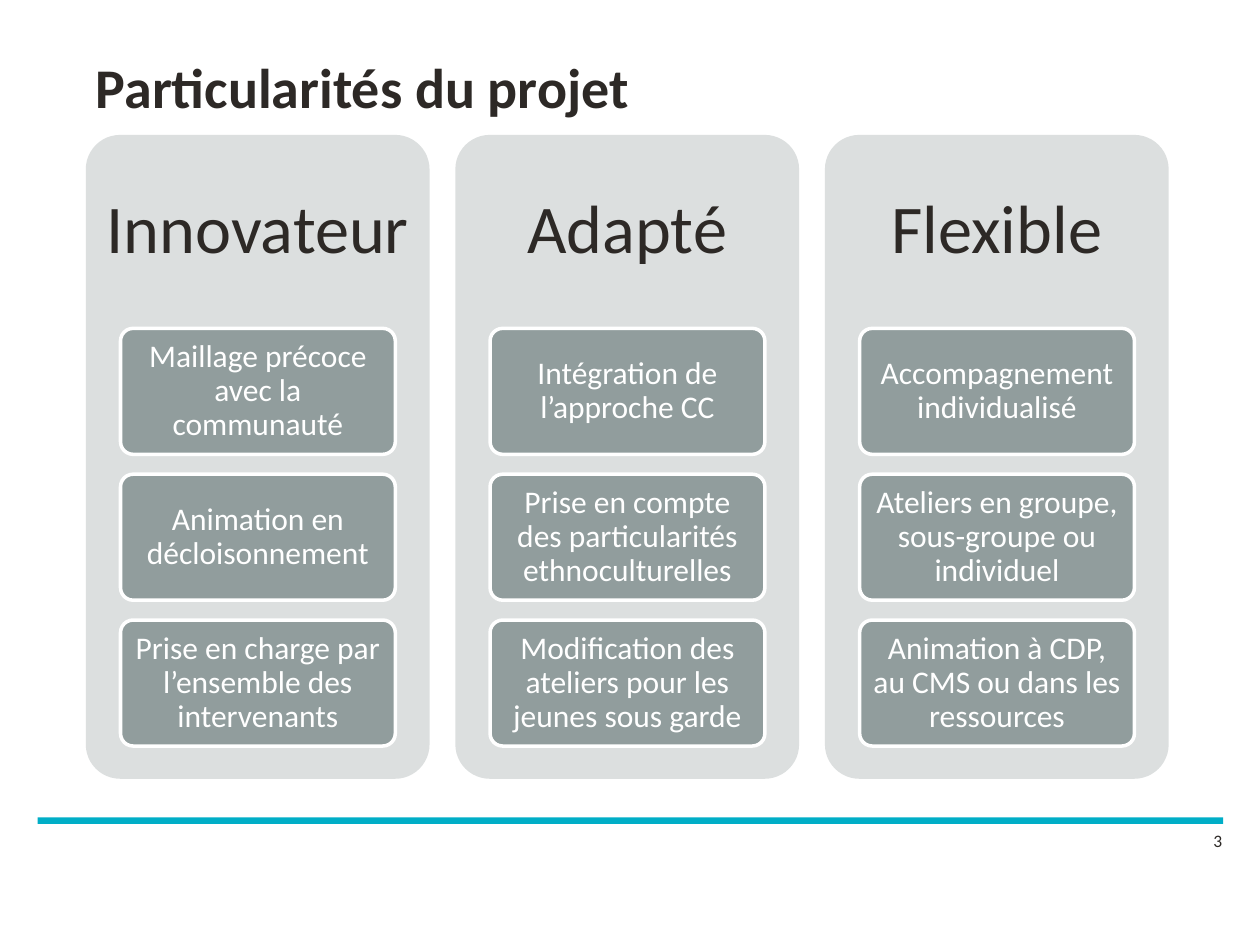
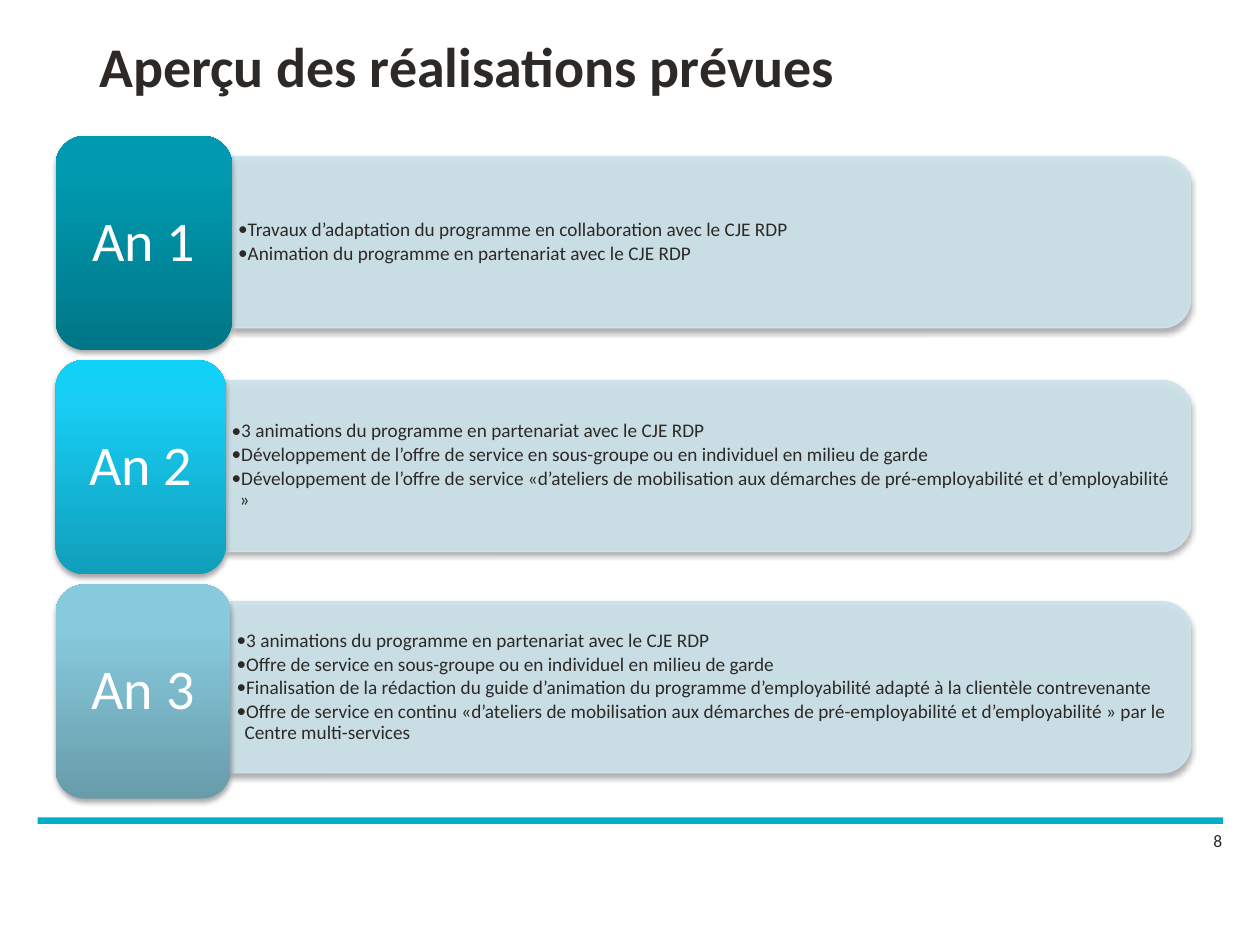
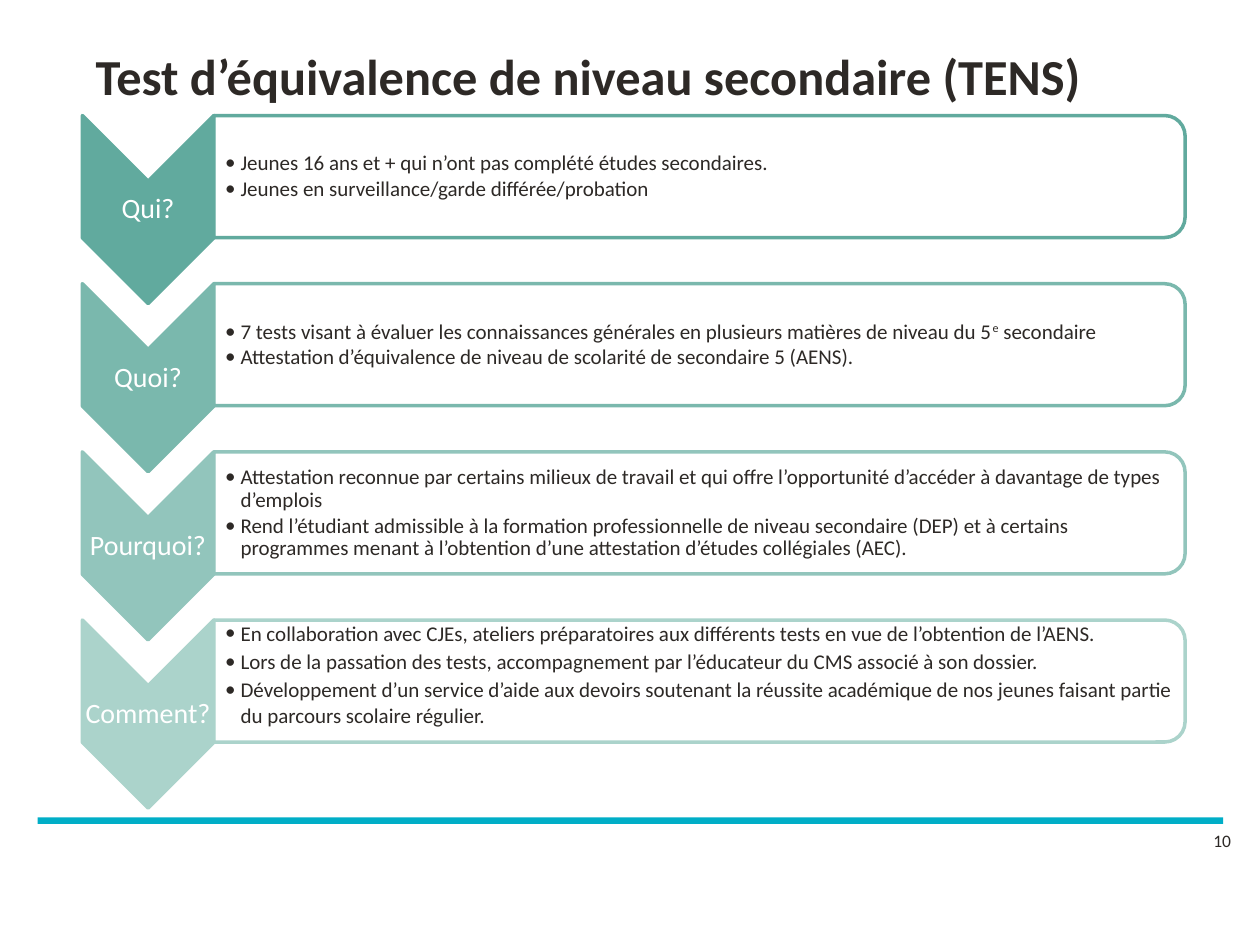
from copy import deepcopy

from lxml.etree import SubElement
from pptx import Presentation
from pptx.dml.color import RGBColor
from pptx.enum.shapes import MSO_SHAPE
from pptx.enum.text import MSO_ANCHOR, PP_ALIGN
from pptx.oxml.ns import qn
from pptx.util import Cm, Pt

FONT = "Calibri"
INK = "2D2926"
WHITE = "FFFFFF"
ACCENT = "00AEC7"
CARD = "DCDFDF"
CARD_ITEM = "919D9D"
YEAR_PANEL = "CCE3EB"

FEATURES = [
    ("Innovateur", [
        "Maillage précoce avec la communauté",
        "Animation en décloisonnement",
        "Prise en charge par l’ensemble des intervenants",
    ]),
    ("Adapté", [
        "Intégration de l’approche CC",
        "Prise en compte des particularités ethnoculturelles",
        "Modification des ateliers pour les jeunes sous garde",
    ]),
    ("Flexible", [
        "Accompagnement individualisé",
        "Ateliers en groupe, sous-groupe ou individuel",
        "Animation à CDP, au CMS ou dans les ressources",
    ]),
]

YEARS = [
    ("An 1", 3.56, 3.16, ("007687", "0099AF", "009AB0"), [
        "Travaux d’adaptation du programme en collaboration avec le CJE RDP",
        "Animation du programme en partenariat avec le CJE RDP",
    ]),
    ("An 2", 3.43, 7.67, ("119EBB", "17CDF3", "12D1F8"), [
        "3 animations du programme en partenariat avec le CJE RDP",
        "Développement de l’offre de service en sous-groupe ou en individuel en milieu de garde",
        "Développement de l’offre de service «d’ateliers de mobilisation aux démarches "
        "de pré-employabilité et d’employabilité »",
    ]),
    ("An 3", 3.53, 12.13, ("689CAA", "87CADD", "86CCE0"), [
        "3 animations du programme en partenariat avec le CJE RDP",
        "Offre de service en sous-groupe ou en individuel en milieu de garde",
        "Finalisation de la rédaction du guide d’animation du programme d’employabilité "
        "adapté à la clientèle contrevenante",
        "Offre de service en continu «d’ateliers de mobilisation aux démarches "
        "de pré-employabilité et d’employabilité » par le Centre multi-services",
    ]),
]

QUESTIONS = [
    ("Qui?", "61AA9E", 0.9, 0, [
        "Jeunes 16 ans et + qui n’ont pas complété études secondaires.",
        "Jeunes en surveillance/garde différée/probation",
    ]),
    ("Quoi?", "7AB8AD", 0.9, 0, [
        "7 tests visant à évaluer les connaissances générales en plusieurs matières "
        "de niveau du 5^e^ secondaire",
        "Attestation d’équivalence de niveau de scolarité de secondaire 5 (AENS).",
    ]),
    ("Pourquoi?", "92C5BC", 0.9, 0, [
        "Attestation reconnue par certains milieux de travail et qui offre l’opportunité "
        "d’accéder à davantage de types d’emplois",
        "Rend l’étudiant admissible à la formation professionnelle de niveau secondaire (DEP) "
        "et à certains programmes menant à l’obtention d’une attestation d’études "
        "collégiales (AEC).",
    ]),
    ("Comment?", "ABD3CB", 1.0, 0.16, [
        "En collaboration avec CJEs, ateliers préparatoires aux différents tests "
        "en vue de l’obtention de l’AENS.",
        "Lors de la passation des tests, accompagnement par l’éducateur du CMS "
        "associé à son dossier.",
        "Développement d’un service d’aide aux devoirs soutenant la réussite académique "
        "de nos jeunes faisant partie du parcours scolaire régulier.",
    ]),
]


def color(value):
    return RGBColor.from_string(value)


def add_bullet(para, indent):
    properties = para._p.get_or_add_pPr()
    properties.set("marL", str(Cm(indent)))
    properties.set("indent", str(-Cm(indent)))
    SubElement(properties, qn("a:buFont")).set("typeface", FONT)
    SubElement(properties, qn("a:buChar")).set("char", "•")


def write_text(box, lines, size=12, ink=INK, bold=False, align=PP_ALIGN.LEFT,
               anchor=MSO_ANCHOR.MIDDLE, insets=(0.25, 0.13), right=None,
               spacing=1.0, after=0, indent=0):
    frame = box.text_frame
    frame.word_wrap = True
    frame.vertical_anchor = anchor
    frame.margin_left = Cm(insets[0])
    frame.margin_right = Cm(insets[0] if right is None else right)
    frame.margin_top = frame.margin_bottom = Cm(insets[1])
    for index, line in enumerate(lines):
        para = frame.paragraphs[0] if index == 0 else frame.add_paragraph()
        para.alignment = align
        para.line_spacing = spacing
        para.space_after = Pt(after if index < len(lines) - 1 else 0)
        if indent:
            add_bullet(para, indent)
        for position, piece in enumerate(line.split("^")):
            span = para.add_run()
            span.text = piece
            span.font.name = FONT
            span.font.size = Pt(size)
            span.font.bold = bold
            span.font.color.rgb = color(ink)
            if position % 2:
                span._r.get_or_add_rPr().set("baseline", "30000")


def add_text(page, lines, left, top, width, height, **style):
    box = page.shapes.add_textbox(Cm(left), Cm(top), Cm(width), Cm(height))
    write_text(box, lines, **style)


def add_block(page, kind, left, top, width, height, fill=None, line=None,
              weight=2, opacity=100, corner=None):
    block = page.shapes.add_shape(kind, Cm(left), Cm(top), Cm(width), Cm(height))
    block.shadow.inherit = False
    if corner is not None:
        block.adjustments[0] = corner
    if fill:
        block.fill.solid()
        block.fill.fore_color.rgb = color(fill)
        if opacity < 100:
            tone = block._element.spPr.find(".//" + qn("a:srgbClr"))
            SubElement(tone, qn("a:alpha")).set("val", str(opacity * 1000))
    if line:
        block.line.color.rgb = color(line)
        block.line.width = Pt(weight)
    else:
        block.line.fill.background()
    return block


def add_turned_block(page, kind, left, top, width, height, **style):
    shift = (width - height) / 2
    block = add_block(page, kind, left + shift, top - shift, height, width, **style)
    block.rotation = 90
    return block


def add_shadow(block):
    effects = block._element.spPr.find(qn("a:effectLst"))
    shadow = SubElement(effects, qn("a:outerShdw"), blurRad="40000", dist="23000",
                        dir="5400000", rotWithShape="0")
    tone = SubElement(shadow, qn("a:srgbClr"), val="000000")
    SubElement(tone, qn("a:alpha"), val="35000")


def shade_upward(block, colors):
    block.fill.gradient()
    block.fill.gradient_angle = 90
    stops = block._element.spPr.find(".//" + qn("a:gsLst"))
    stops.append(deepcopy(stops[0]))
    for stop, value, position in zip(block.fill.gradient_stops, colors, (0, 0.8, 1)):
        stop.color.rgb = color(value)
        stop.position = position


def add_page(deck, title, number, left, top, size=32):
    page = deck.slides.add_slide(deck.slide_layouts[6])
    add_block(page, MSO_SHAPE.RECTANGLE, 0.76, 16.48, 23.9, 0.13, fill=ACCENT)
    add_text(page, [str(number)], 24.21, 16.61, 1.19, 1.02, size=10, anchor=MSO_ANCHOR.TOP)
    add_text(page, [title], left, top, 22.23, 1.96, size=size, bold=True)
    return page


def add_feature_card(page, left, heading, items):
    top, width = 2.72, 6.93
    add_block(page, MSO_SHAPE.ROUNDED_RECTANGLE, left, top, width, 12.98,
              fill=CARD, corner=0.1)
    add_text(page, [heading], left, top, width, 3.89, size=39, align=PP_ALIGN.CENTER,
             insets=(0.4, 0.4), spacing=0.9)
    for row, item in enumerate(items):
        box = add_block(page, MSO_SHAPE.ROUNDED_RECTANGLE, left + 0.7, 6.62 + 2.94 * row,
                        5.54, 2.54, fill=CARD_ITEM, line=WHITE, corner=0.1)
        write_text(box, [item], size=18, ink=WHITE, align=PP_ALIGN.CENTER,
                   insets=(0.13, 0.1), spacing=0.9)


def add_year(page, top, label, width, panel_top, colors, items):
    left, panel_right = 1.12, 24
    panel_left = left + width
    panel_width = panel_right - panel_left
    panel = add_turned_block(page, MSO_SHAPE.ROUND_2_SAME_RECTANGLE, panel_left, panel_top,
                             panel_width, 3.45, fill=YEAR_PANEL, line=YEAR_PANEL,
                             weight=0.75, opacity=90)
    add_shadow(panel)
    add_text(page, items, panel_left, panel_top + 0.17, panel_width - 0.17, 3.1, size=11,
             insets=(0.12, 0.06), spacing=0.9, after=1.65, indent=0.16)
    badge = add_block(page, MSO_SHAPE.ROUNDED_RECTANGLE, left, top, width, 4.32)
    shade_upward(badge, colors)
    add_shadow(badge)
    write_text(badge, [label], size=32, ink=WHITE, align=PP_ALIGN.CENTER,
               insets=(0.33, 0.17), spacing=0.9)


def add_question(page, top, label, tint, spacing, rise, answers):
    left, width = 1.66, 2.65
    panel_left = left + width
    add_turned_block(page, MSO_SHAPE.CHEVRON, left, top, width, 3.79, fill=tint, line=tint)
    add_text(page, [label], left, top + 1.33, width, 1.14, size=16, ink=WHITE,
             align=PP_ALIGN.CENTER, insets=(0.03, 0.03), spacing=0.9)
    add_turned_block(page, MSO_SHAPE.ROUND_2_SAME_RECTANGLE, panel_left, top, 19.58, 2.46,
                     fill=WHITE, line=tint, opacity=90)
    add_text(page, answers, panel_left, top + 0.13 - rise, 19.46, 2.22, size=12,
             insets=(0.23, 0.03), right=0.03, spacing=spacing, after=1.8, indent=0.31)


def main():
    deck = Presentation()
    deck.slide_width, deck.slide_height = Cm(25.4), Cm(19.05)

    page = add_page(deck, "Particularités du projet", 3, 1.68, 0.76)
    for column, (heading, items) in enumerate(FEATURES):
        add_feature_card(page, 1.73 + 7.45 * column, heading, items)

    page = add_page(deck, "Aperçu des réalisations prévues", 8, 1.75, 0.33)
    for row, year in enumerate(YEARS):
        add_year(page, 2.74 + 4.52 * row, *year)

    page = add_page(deck, "Test d’équivalence de niveau secondaire (TENS)", 10, 1.68, 0.53,
                    size=28.8)
    for row, question in enumerate(QUESTIONS):
        add_question(page, 2.33 + 3.39 * row, *question)

    deck.save("out.pptx")


if __name__ == "__main__":
    main()
